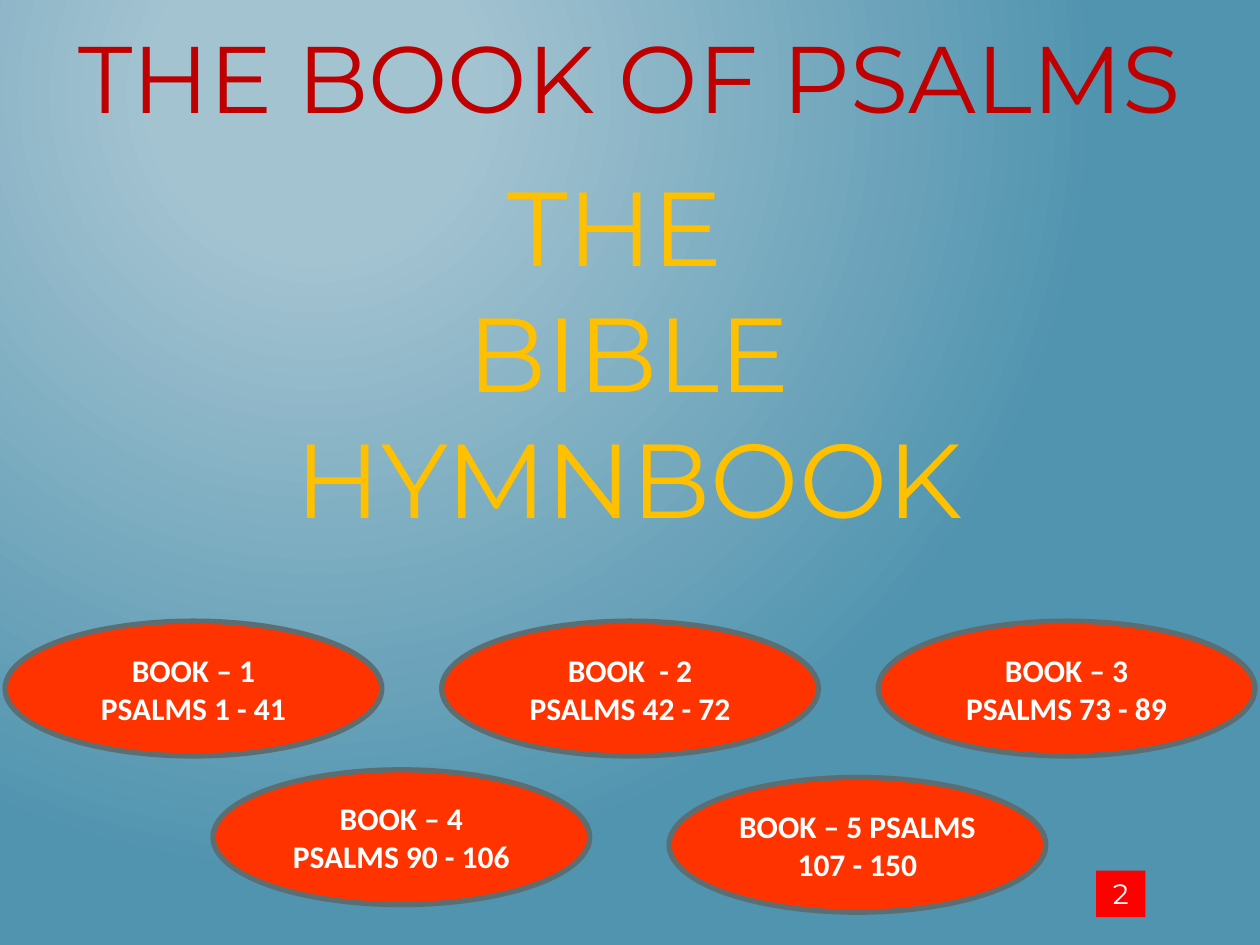
"""Build the Book of Psalms opening slide."""
from lxml import etree
from pptx import Presentation
from pptx.dml.color import RGBColor
from pptx.enum import shapes, text
from pptx.oxml import ns
from pptx.util import Inches, Pt

TITLE = "THE BOOK OF PSALMS"
SUBTITLE = ["THE ", "BIBLE", "HYMNBOOK"]
PAGE_NUMBER = "2"
BOOK_ROWS = [
    (0.04, 3.465, [
        (4.93, ["BOOK – 1", "PSALMS 1 - 41"]),
        (4.93, ["BOOK  - 2", "PSALMS 42 - 72"]),
        (4.93, ["BOOK – 3", "PSALMS 73 - 89"]),
    ]),
    (1.69, 3.62, [
        (6.11, ["BOOK – 4", "PSALMS 90 - 106"]),
        (6.17, ["BOOK – 5 PSALMS 107 - 150"]),
    ]),
]
BOOK_SIZE = (2.99, 1.07)
BACKGROUND_STOPS = [(20, "A3C3D1"), (100, "5194AF")]
GLOW_RECT = {"l": 50, "t": 20, "r": 100, "b": 100}


def color(hex_code):
    return RGBColor.from_string(hex_code)


def place(part, left, top, width, height):
    part.left, part.top = Inches(left), Inches(top)
    part.width, part.height = Inches(width), Inches(height)


def write(part, lines, font, size, hex_code, bold=False,
          anchor=text.MSO_ANCHOR.TOP, grow=True):
    frame = part.text_frame
    frame.word_wrap = True
    frame.vertical_anchor = anchor
    frame.auto_size = (text.MSO_AUTO_SIZE.SHAPE_TO_FIT_TEXT if grow
                       else text.MSO_AUTO_SIZE.NONE)
    for index, line in enumerate(lines):
        paragraph = frame.add_paragraph() if index else frame.paragraphs[0]
        paragraph.alignment = text.PP_ALIGN.CENTER
        run = paragraph.add_run()
        run.text = line
        run.font.name, run.font.size, run.font.bold = font, Pt(size), bold
        run.font.color.rgb = color(hex_code)


def add_filled(slide, preset, box, fill):
    part = slide.shapes.add_shape(preset, *map(Inches, box))
    part.shadow.inherit = False
    part.fill.solid()
    part.fill.fore_color.rgb = color(fill)
    part.line.fill.background()
    return part


def paint_background(slide):
    fill = slide.background.fill
    fill.gradient()
    for stop, (position, hex_code) in zip(fill.gradient_stops, BACKGROUND_STOPS):
        stop.position = position / 100
        stop.color.rgb = color(hex_code)
    gradient = slide.element.find(".//" + ns.qn("a:gradFill"))
    linear = gradient.find(ns.qn("a:lin"))
    glow = etree.Element(ns.qn("a:path"), path="circle")
    etree.SubElement(glow, ns.qn("a:fillToRect"),
                     {side: str(value * 1000) for side, value in GLOW_RECT.items()})
    gradient.replace(linear, glow)


def main():
    deck = Presentation()
    deck.slide_width, deck.slide_height = Inches(10), Inches(7.5)
    slide = deck.slides.add_slide(deck.slide_layouts[5])
    paint_background(slide)

    title = slide.shapes.title
    place(title, -0.01, 0.1, 10.01, 1.01)
    write(title, [TITLE], "Montserrat", 54, "C00000")

    subtitle = slide.shapes.add_textbox(*map(Inches, (-0.01, 1.23, 10, 3.13)))
    write(subtitle, SUBTITLE, "Montserrat", 60, "FFC000")

    for left, pitch, books in BOOK_ROWS:
        for column, (top, lines) in enumerate(books):
            box = (left + column * pitch, top, *BOOK_SIZE)
            book = add_filled(slide, shapes.MSO_SHAPE.OVAL, box, "FF3300")
            book.line.color.rgb = color("5C6E72")
            book.line.width = Pt(3)
            write(book, lines, "Calibri", 18, "FFFFFF", bold=True,
                  anchor=text.MSO_ANCHOR.MIDDLE, grow=False)

    page = add_filled(slide, shapes.MSO_SHAPE.RECTANGLE,
                      (8.7, 6.91, 0.39, 0.37), "FF0000")
    write(page, [PAGE_NUMBER], "Montserrat", 16, "FFFFFF")

    deck.save("out.pptx")


if __name__ == "__main__":
    main()
